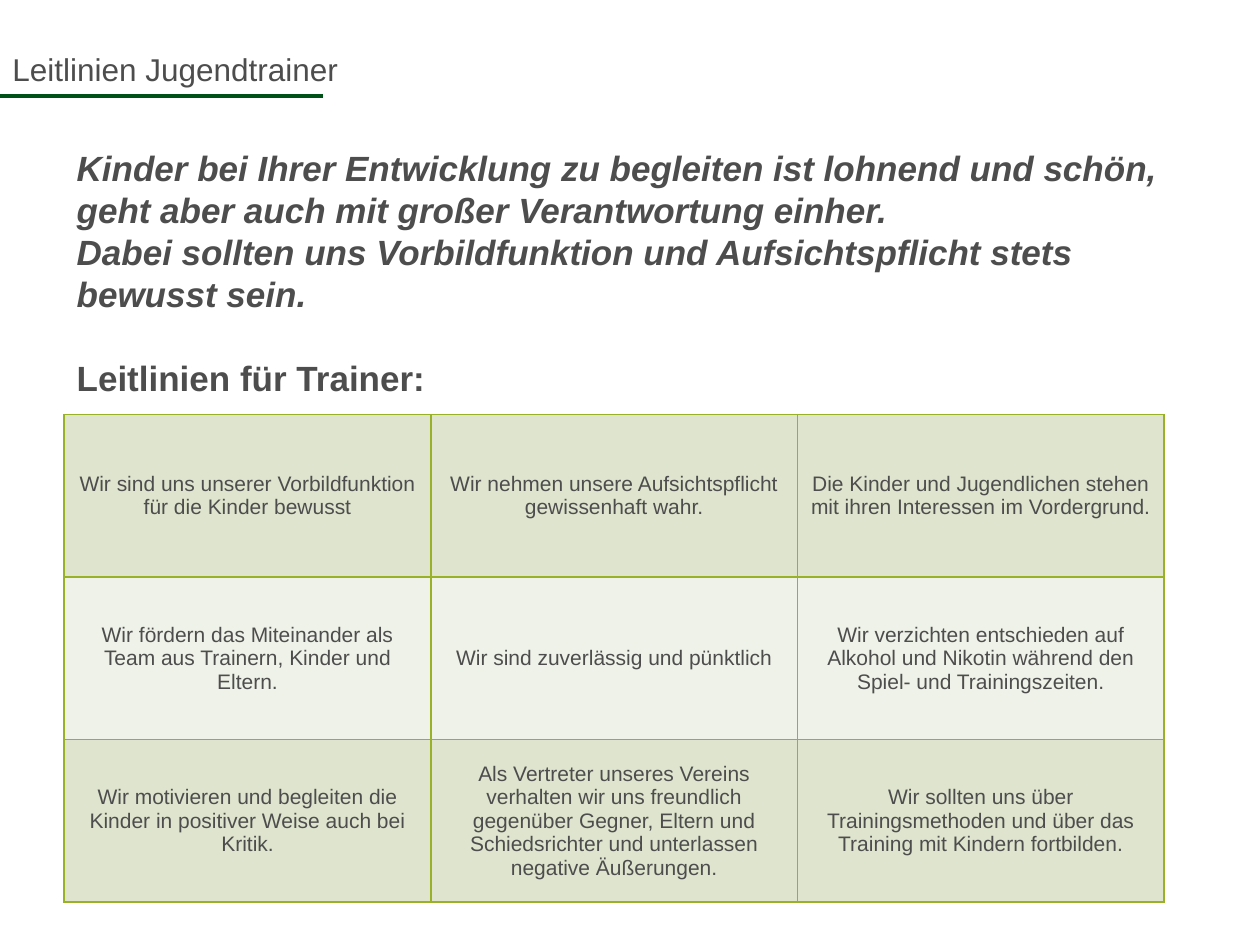
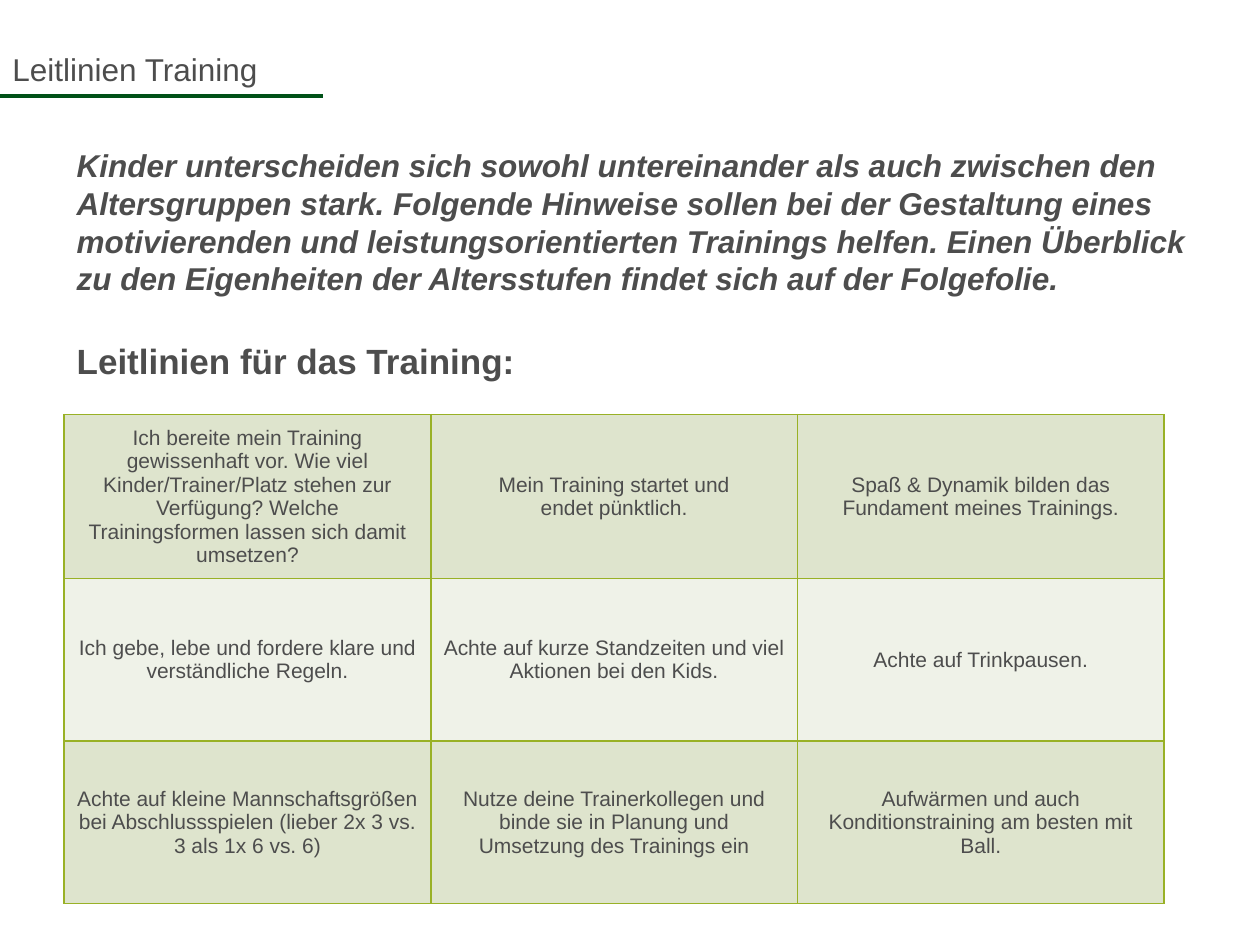
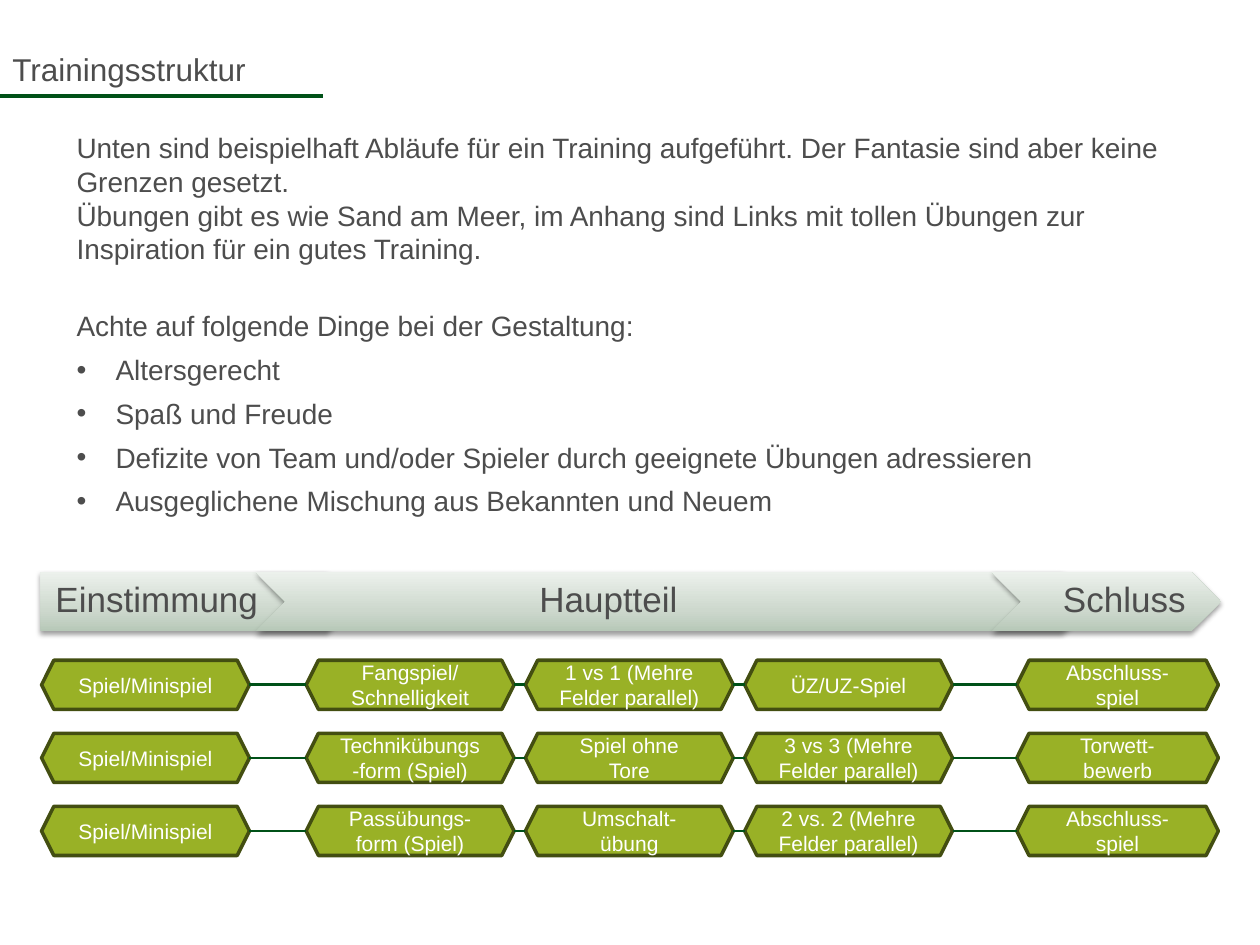
from dataclasses import dataclass
from itertools import pairwise

from lxml.etree import SubElement
from pptx import Presentation
from pptx.dml.color import RGBColor
from pptx.enum.shapes import MSO_CONNECTOR, MSO_SHAPE
from pptx.enum.text import MSO_ANCHOR, PP_ALIGN
from pptx.oxml import parse_xml
from pptx.oxml.ns import nsdecls, qn
from pptx.presentation import Presentation as Deck
from pptx.shapes.autoshape import Shape
from pptx.slide import Slide
from pptx.table import _Cell as Cell
from pptx.text.text import TextFrame
from pptx.util import Emu, Pt

EMU_PER_PX = 9144
FONT = "Arial"
LINE_FACTOR = 1.2

WHITE = RGBColor(0xFF, 0xFF, 0xFF)
TEXT_GREY = RGBColor(0x4D, 0x4D, 0x4D)
DARK_GREEN = RGBColor(0x00, 0x51, 0x18)
LIME = RGBColor(0x99, 0xB1, 0x26)
OLIVE = RGBColor(0x43, 0x4E, 0x11)
ROW_FILLS = (RGBColor(0xDE, 0xE4, 0xCD), RGBColor(0xEF, 0xF2, 0xE8))
PHASE_STOPS = (
    (0, RGBColor(0xB7, 0xC8, 0xB8)),
    (35, RGBColor(0xCD, 0xD8, 0xCD)),
    (100, RGBColor(0xEC, 0xF1, 0xEC)),
)

BODY_LEFT = 51
TABLE_TOP, COLUMN_WIDTH, ROW_HEIGHT = 329, 291, 129
PHASE_TOP, PHASE_HEIGHT = 454, 47
STEP_TOP, STEP_PITCH, STEP_HEIGHT = 524, 58, 39
STEP_COLUMNS = ((33, 165), (243, 165), (417, 165), (591, 165), (807, 160))


@dataclass(frozen=True)
class Guidelines:
    title: str
    intro: tuple[str, ...]
    intro_size: int
    heading: str
    rules: tuple[tuple[str, ...], ...]


@dataclass(frozen=True)
class Phase:
    name: str
    kind: MSO_SHAPE
    left: int
    width: int
    label_left: int
    label_width: int
    inset: int
    align: PP_ALIGN = PP_ALIGN.LEFT


GUIDELINES = (
    Guidelines(
        "Leitlinien Jugendtrainer",
        (
            "Kinder bei Ihrer Entwicklung zu begleiten ist lohnend und schön, "
            "geht aber auch mit großer Verantwortung einher.",
            "Dabei sollten uns Vorbildfunktion und Aufsichtspflicht stets bewusst sein.",
        ),
        20,
        "Leitlinien für Trainer:",
        (
            (
                "Wir sind uns unserer Vorbildfunktion für die Kinder bewusst",
                "Wir nehmen unsere Aufsichtspflicht gewissenhaft wahr.",
                "Die Kinder und Jugendlichen stehen mit ihren Interessen im Vordergrund.",
            ),
            (
                "Wir fördern das Miteinander als Team aus Trainern, Kinder und Eltern.",
                "Wir sind zuverlässig und pünktlich",
                "Wir verzichten entschieden auf Alkohol und Nikotin während den "
                "Spiel- und Trainingszeiten.",
            ),
            (
                "Wir motivieren und begleiten die Kinder in positiver Weise auch bei Kritik.",
                "Als Vertreter unseres Vereins verhalten wir uns freundlich gegenüber Gegner, "
                "Eltern und Schiedsrichter und unterlassen negative Äußerungen.",
                "Wir sollten uns über Trainingsmethoden und über das Training mit Kindern "
                "fortbilden.",
            ),
        ),
    ),
    Guidelines(
        "Leitlinien Training",
        (
            "Kinder unterscheiden sich sowohl untereinander als auch zwischen den "
            "Altersgruppen stark. Folgende Hinweise sollen bei der Gestaltung eines "
            "motivierenden und leistungsorientierten Trainings helfen. Einen Überblick "
            "zu den Eigenheiten der Altersstufen findet sich auf der Folgefolie.",
        ),
        18,
        "Leitlinien für das Training:",
        (
            (
                "Ich bereite mein Training\ngewissenhaft vor. Wie viel\n"
                "Kinder/Trainer/Platz stehen zur Verfügung? Welche\n"
                "Trainingsformen lassen sich damit umsetzen?",
                "Mein Training startet und\nendet pünktlich.",
                "Spaß & Dynamik bilden das\nFundament meines Trainings.",
            ),
            (
                "Ich gebe, lebe und fordere klare und\nverständliche Regeln.",
                "Achte auf kurze Standzeiten und viel Aktionen bei den Kids.",
                "Achte auf Trinkpausen.",
            ),
            (
                "Achte auf kleine Mannschaftsgrößen bei Abschlussspielen "
                "(lieber 2x 3 vs. 3 als 1x 6 vs. 6)",
                "Nutze deine Trainerkollegen und binde sie in Planung und\n"
                "Umsetzung des Trainings ein",
                "Aufwärmen und auch Konditionstraining am besten mit Ball.",
            ),
        ),
    ),
)

STRUCTURE_INTRO = (
    "Unten sind beispielhaft Abläufe für ein Training aufgeführt. "
    "Der Fantasie sind aber keine Grenzen gesetzt.",
    "Übungen gibt es wie Sand am Meer, im Anhang sind Links mit tollen Übungen "
    "zur Inspiration für ein gutes Training.",
)
STRUCTURE_POINTS = (
    "Altersgerecht",
    "Spaß und Freude",
    "Defizite von Team und/oder Spieler durch geeignete Übungen adressieren",
    "Ausgeglichene Mischung aus Bekannten und Neuem",
)
PHASES = (
    Phase("Einstimmung", MSO_SHAPE.PENTAGON, 32, 251, 32, 239, 12),
    Phase("Hauptteil", MSO_SHAPE.CHEVRON, 203, 663, 227, 615, 201),
    Phase("Schluss", MSO_SHAPE.CHEVRON, 787, 182, 810, 134, 9, PP_ALIGN.RIGHT),
)
SESSIONS = (
    ("Spiel/Minispiel", "Fangspiel/\nSchnelligkeit", "1 vs 1 (Mehre Felder parallel)",
     "ÜZ/UZ-Spiel", "Abschluss-spiel"),
    ("Spiel/Minispiel", "Technikübungs-form (Spiel)", "Spiel ohne Tore",
     "3 vs 3 (Mehre Felder parallel)", "Torwett-bewerb"),
    ("Spiel/Minispiel", "Passübungs-form (Spiel)", "Umschalt-übung",
     "2 vs. 2 (Mehre Felder parallel)", "Abschluss-spiel"),
)


def px(length: float) -> Emu:
    return Emu(round(length * EMU_PER_PX))


def add_text(
    frame: TextFrame,
    text: str,
    *,
    size: int,
    color: RGBColor = TEXT_GREY,
    bold: bool = False,
    italic: bool = False,
    align: PP_ALIGN = PP_ALIGN.LEFT,
    spacing: float | Pt | None = None,
    before: float = 0,
    bullet: bool = False,
) -> None:
    """Append one paragraph for each line of the text."""
    for line in text.split("\n"):
        first = frame.paragraphs[0]
        paragraph = frame.add_paragraph() if first.runs else first
        if bullet:
            properties = paragraph._p.get_or_add_pPr()
            properties.set("marL", str(px(31)))
            properties.set("indent", str(-px(31)))
            SubElement(properties, qn("a:buFont")).set("typeface", FONT)
            SubElement(properties, qn("a:buChar")).set("char", "•")
        paragraph.alignment = align
        if spacing is not None:
            paragraph.line_spacing = spacing
        if before:
            paragraph.space_before = Pt(before)
        run = paragraph.add_run()
        run.text = line
        run.font.name = FONT
        run.font.size = Pt(size)
        run.font.bold = bold
        run.font.italic = italic
        run.font.color.rgb = color


def leading(size: int) -> Pt:
    return Pt(size * LINE_FACTOR)


def add_text_box(slide: Slide, left: int, top: int, width: int, height: int) -> TextFrame:
    frame = slide.shapes.add_textbox(px(left), px(top), px(width), px(height)).text_frame
    frame.word_wrap = True
    return frame


def add_line(slide: Slide, start: int, end: int, y: float, weight: float) -> None:
    connector = slide.shapes.add_connector(
        MSO_CONNECTOR.STRAIGHT, px(start), px(y), px(end), px(y)
    )
    connector.line.color.rgb = DARK_GREEN
    connector.line.width = Pt(weight)
    SubElement(connector._element.spPr, qn("a:effectLst"))


def add_titled_slide(presentation: Deck, title: str) -> Slide:
    slide = presentation.slides.add_slide(presentation.slide_layouts[6])
    slide.background.fill.solid()
    slide.background.fill.fore_color.rgb = WHITE
    add_line(slide, 0, 256, 76, 2.25)
    add_text(add_text_box(slide, 0, 35, 350, 40), title, size=18, spacing=leading(18))
    return slide


def set_borders(cell: Cell) -> None:
    properties = cell._tc.get_or_add_tcPr()
    for position, side in enumerate(("lnL", "lnR", "lnT", "lnB")):
        properties.insert(position, parse_xml(
            f'<a:{side} {nsdecls("a")} w="{Pt(1)}"><a:solidFill>'
            f'<a:srgbClr val="{LIME}"/></a:solidFill></a:{side}>'
        ))


def add_rules_table(slide: Slide, rules: tuple[tuple[str, ...], ...]) -> None:
    rows, columns = len(rules), len(rules[0])
    table = slide.shapes.add_table(
        rows, columns, px(BODY_LEFT), px(TABLE_TOP),
        px(columns * COLUMN_WIDTH), px(rows * ROW_HEIGHT),
    ).table
    table.first_row = table.horz_banding = False
    for row_index, row in enumerate(rules):
        for column_index, rule in enumerate(row):
            cell = table.cell(row_index, column_index)
            cell.vertical_anchor = MSO_ANCHOR.MIDDLE
            cell.fill.solid()
            cell.fill.fore_color.rgb = ROW_FILLS[row_index % 2]
            set_borders(cell)
            add_text(cell.text_frame, rule, size=12, align=PP_ALIGN.CENTER)


def add_guidelines_slide(presentation: Deck, guidelines: Guidelines) -> None:
    slide = add_titled_slide(presentation, guidelines.title)
    frame = add_text_box(slide, BODY_LEFT, 111, 929, 212)
    size = guidelines.intro_size
    for text in guidelines.intro:
        add_text(frame, text, size=size, bold=True, italic=True, spacing=leading(size))
    add_text(frame, guidelines.heading, size=20, bold=True,
             spacing=leading(20), before=24)
    add_rules_table(slide, guidelines.rules)


def style_phase(shape: Shape) -> None:
    """Give the arrow its vertical gradient and soft shadow."""
    stops = "".join(
        f'<a:gs pos="{percent * 1000}"><a:srgbClr val="{color}"/></a:gs>'
        for percent, color in PHASE_STOPS
    )
    properties = shape._element.spPr
    properties.insert(2, parse_xml(
        f'<a:gradFill {nsdecls("a")} rotWithShape="1"><a:gsLst>{stops}</a:gsLst>'
        '<a:lin ang="16200000" scaled="0"/></a:gradFill>'
    ))
    shape.line.fill.background()
    shape.shadow.inherit = False
    properties.find(qn("a:effectLst")).append(parse_xml(
        f'<a:outerShdw {nsdecls("a")} blurRad="{Pt(3.1)}" dist="{Pt(1.6)}" '
        'dir="5400000" rotWithShape="0"><a:srgbClr val="000000">'
        '<a:alpha val="38000"/></a:srgbClr></a:outerShdw>'
    ))


def add_phase(slide: Slide, phase: Phase) -> None:
    style_phase(slide.shapes.add_shape(
        phase.kind, px(phase.left), px(PHASE_TOP), px(phase.width), px(PHASE_HEIGHT)
    ))
    frame = add_text_box(slide, phase.label_left, PHASE_TOP, phase.label_width, PHASE_HEIGHT)
    frame.vertical_anchor = MSO_ANCHOR.MIDDLE
    frame.margin_left, frame.margin_right = px(phase.inset), px(3)
    frame.margin_top = frame.margin_bottom = px(6)
    add_text(frame, phase.name, size=20, align=phase.align, spacing=0.9)


def add_step(slide: Slide, text: str, left: int, top: int, width: int) -> None:
    shape = slide.shapes.add_shape(
        MSO_SHAPE.HEXAGON, px(left), px(top), px(width), px(STEP_HEIGHT)
    )
    shape.shadow.inherit = False
    shape.fill.solid()
    shape.fill.fore_color.rgb = LIME
    shape.line.color.rgb = OLIVE
    shape.line.width = Pt(2)
    frame = shape.text_frame
    frame.word_wrap = True
    frame.vertical_anchor = MSO_ANCHOR.MIDDLE
    add_text(frame, text, size=12, color=WHITE, align=PP_ALIGN.CENTER, spacing=leading(12))


def add_session(slide: Slide, steps: tuple[str, ...], top: int) -> None:
    for text, (left, width) in zip(steps, STEP_COLUMNS):
        add_step(slide, text, left, top, width)
    for (left, width), (next_left, _) in pairwise(STEP_COLUMNS):
        add_line(slide, left + width, next_left, top + STEP_HEIGHT / 2, 1.5)


def add_structure_slide(presentation: Deck) -> None:
    slide = add_titled_slide(presentation, "Trainingsstruktur")
    for phase in PHASES:
        add_phase(slide, phase)
    frame = add_text_box(slide, BODY_LEFT, 99, 890, 320)
    for text in STRUCTURE_INTRO:
        add_text(frame, text, size=16, spacing=leading(16))
    add_text(frame, "Achte auf folgende Dinge bei der Gestaltung:", size=16,
             spacing=Pt(25), before=19.2)
    for point in STRUCTURE_POINTS:
        add_text(frame, point, size=16, spacing=Pt(25), bullet=True)
    for index, steps in enumerate(SESSIONS):
        add_session(slide, steps, STEP_TOP + index * STEP_PITCH)


def main() -> None:
    presentation = Presentation()
    presentation.slide_width, presentation.slide_height = px(1000), px(750)
    for guidelines in GUIDELINES:
        add_guidelines_slide(presentation, guidelines)
    add_structure_slide(presentation)
    presentation.save("out.pptx")


if __name__ == "__main__":
    main()
